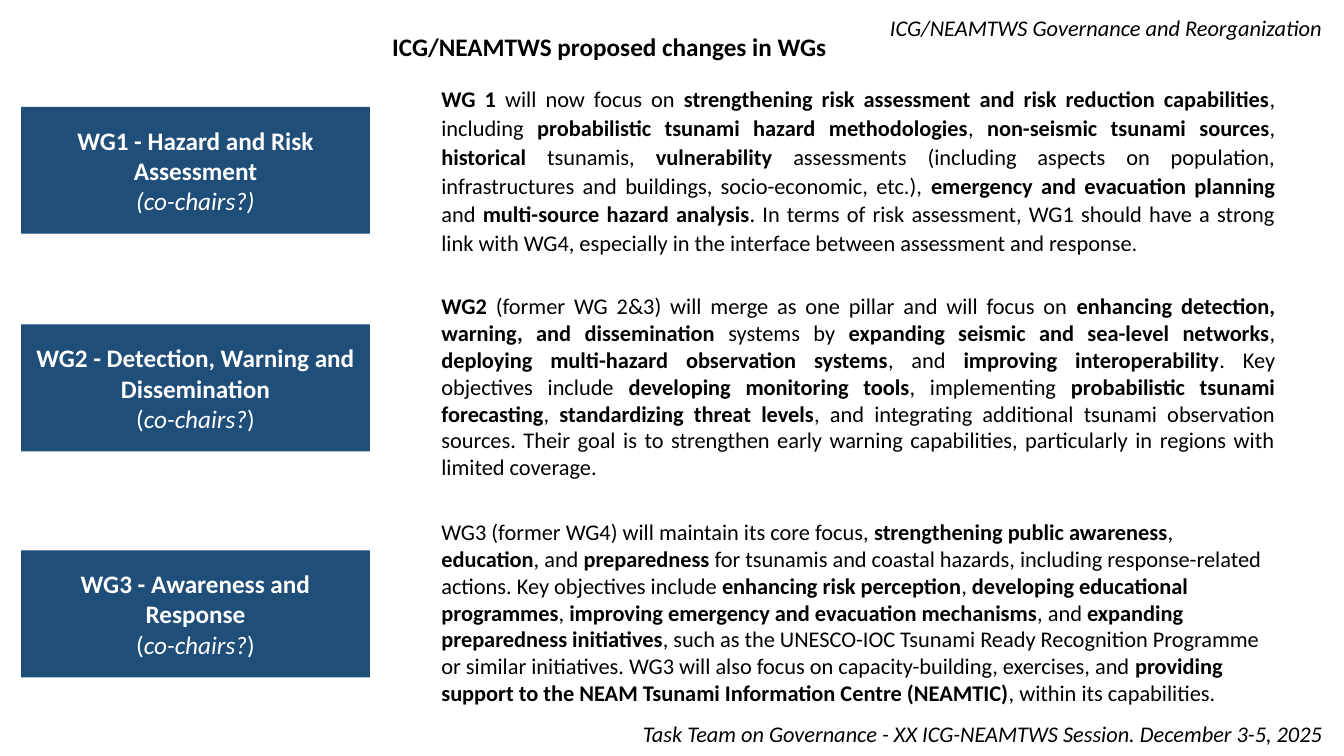
from pptx import Presentation
from pptx.dml.color import RGBColor
from pptx.enum import shapes, text
from pptx.util import Pt

FONT = "Calibri"
NAVY, WHITE, BLACK = "1F4E79", "FFFFFF", "000000"
CENTER, JUSTIFY, LEFT = (text.PP_ALIGN.CENTER, text.PP_ALIGN.JUSTIFY,
                         text.PP_ALIGN.LEFT)
BOX_LEFT, BOX_WIDTH, BOX_HEIGHT = 15.1, 249.1, 90.7
BODY_LEFT = 308.2

GROUPS = [
    dict(title="WG1 - Hazard and Risk Assessment", chairs="*(co-chairs?)*",
         box_top=76.3, body_top=56.2, width=609.8, height=131, align=JUSTIFY,
         spacing=1.07,
         body="*WG 1* will now focus on *strengthening risk assessment and risk "
              "reduction capabilities*, including *probabilistic tsunami hazard "
              "methodologies*, *non-seismic tsunami sources*, *historical* "
              "tsunamis, *vulnerability* assessments (including aspects on "
              "population, infrastructures and buildings, socio-economic, etc.), "
              "*emergency and evacuation planning *and *multi-source hazard "
              "analysis*. In terms of risk assessment, WG1 should have a strong "
              "link with WG4, especially in the interface between assessment and "
              "response."),
    dict(title="WG2 - Detection, Warning and Dissemination",
         chairs="(*co-chairs?*)",
         box_top=231.8, body_top=205.2, width=609.8, height=143.3,
         align=JUSTIFY, spacing=1.0,
         body="*WG2* (former WG 2&3) will merge as one pillar and will focus on "
              "*enhancing detection, warning, and dissemination* systems by "
              "*expanding seismic and sea-level networks*, *deploying "
              "multi-hazard observation systems*, and *improving "
              "interoperability*. Key objectives include *developing monitoring "
              "tools*, implementing *probabilistic tsunami forecasting*, "
              "*standardizing threat levels*, and integrating additional tsunami "
              "observation sources. Their goal is to strengthen early warning "
              "capabilities, particularly in regions with limited coverage."),
    dict(title="WG3 - Awareness and Response", chairs="(*co-chairs?*)",
         box_top=393.1, body_top=366.5, width=602.6, height=143.3, align=LEFT,
         spacing=1.0,
         body="WG3 (former WG4) will maintain its core focus, *strengthening "
              "public awareness*, *education*, and *preparedness* for tsunamis "
              "and coastal hazards, including response-related actions. Key "
              "objectives include *enhancing risk perception*, *developing "
              "educational programmes*, *improving emergency and evacuation "
              "mechanisms*, and *expanding preparedness initiatives*, such as "
              "the UNESCO-IOC Tsunami Ready Recognition Programme or similar "
              "initiatives. WG3 will also focus on capacity-building, exercises, "
              "and *providing support to the NEAM Tsunami Information Centre "
              "(NEAMTIC)*, within its capabilities."),
]


def rgb(value):
    """Turn a hex string into a colour."""
    return RGBColor.from_string(value)


def write(p, marked, size, color, emphasis="bold", align=CENTER, spacing=1.0):
    """Fill a paragraph, giving the emphasis to parts between asterisks."""
    p.alignment, p.line_spacing = align, spacing
    for i, part in enumerate(marked.split("*")):
        if not part:
            continue
        r = p.add_run()
        r.text = part
        values = {"name": FONT, "size": Pt(size), "bold": False,
                  "italic": False}
        values[emphasis] = i % 2 == 1
        for name, value in values.items():
            setattr(r.font, name, value)
        r.font.color.rgb = rgb(color)


def add_text(s, left, top, width, height, marked, size=16, **style):
    """Add a wrapped text box with one paragraph."""
    sp = s.shapes.add_textbox(Pt(left), Pt(top), Pt(width), Pt(height))
    tf = sp.text_frame
    tf.word_wrap = True
    write(tf.paragraphs[0], marked, size, BLACK, **style)


def add_group_box(s, top, title, chairs):
    """Add a navy box with a working group's title and chairs."""
    sp = s.shapes.add_shape(shapes.MSO_SHAPE.RECTANGLE, Pt(BOX_LEFT), Pt(top),
                            Pt(BOX_WIDTH), Pt(BOX_HEIGHT))
    sp.shadow.inherit = False
    sp.fill.solid()
    sp.fill.fore_color.rgb = rgb(NAVY)
    sp.line.fill.background()
    tf = sp.text_frame
    tf.word_wrap = True
    tf.vertical_anchor = text.MSO_ANCHOR.MIDDLE
    write(tf.paragraphs[0], f"*{title}*", 18, WHITE)
    write(tf.add_paragraph(), chairs, 18, WHITE, "italic")


def main():
    """Build the slide and save it."""
    prs = Presentation()
    prs.slide_width, prs.slide_height = Pt(960), Pt(540)
    s = prs.slides.add_slide(prs.slide_layouts[6])
    add_text(s, 446.4, 511.2, 511.2, 26.6,
             "*Task Team on Governance - XX ICG-NEAMTWS Session. "
             "December 3-5, 2025*", emphasis="italic")
    add_text(s, 625, 6.5, 329.8, 26.6,
             "*ICG/NEAMTWS Governance and Reorganization*", emphasis="italic")
    for g in GROUPS:
        add_group_box(s, g["box_top"], g["title"], g["chairs"])
        add_text(s, BODY_LEFT, g["body_top"], g["width"], g["height"],
                 g["body"], align=g["align"], spacing=g["spacing"])
    add_text(s, 272.2, 18.7, 326.2, 28.8,
             "*ICG/NEAMTWS proposed changes in WGs*", size=18)
    prs.save("out.pptx")


if __name__ == "__main__":
    main()
